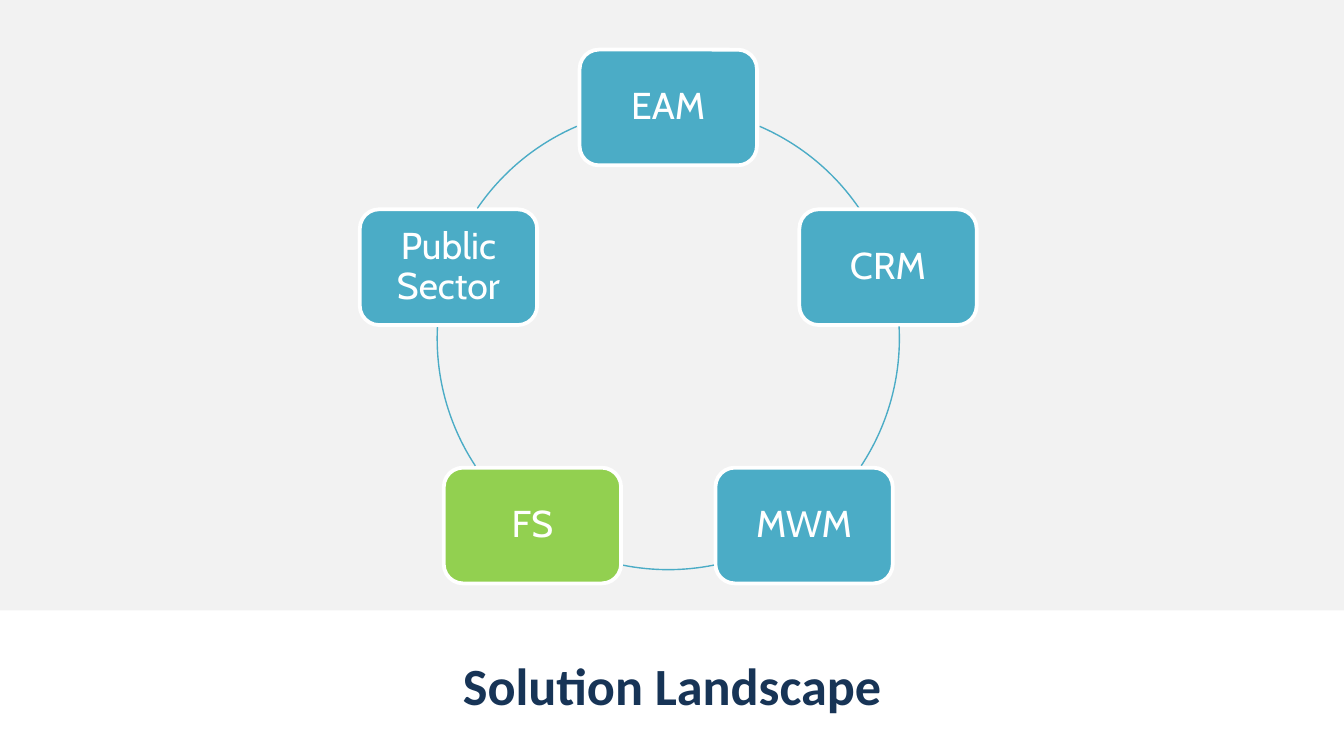
from math import cos, radians, sin

from pptx import Presentation
from pptx.dml.color import RGBColor
from pptx.enum.shapes import MSO_SHAPE
from pptx.enum.text import MSO_ANCHOR, PP_ALIGN
from pptx.util import Pt

TITLE = "Solution Landscape"
# Clockwise from the top: label, fill, and start and end angle of the arc to the next node
NODES = [
    ("EAM", "teal", 293.3, 325.7),
    ("CRM", "teal", 357, 33.4),
    ("MWM", "teal", 78.6, 101.4),
    ("FS", "green", 146.6, 183),
    ("Public Sector", "teal", 214.3, 246.7),
]
COLORS = {
    "panel": "F2F2F2",
    "teal": "4BACC6",
    "green": "92D050",
    "white": "FFFFFF",
    "navy": "173456",
}
SLIDE_WIDTH, SLIDE_HEIGHT = 720, 405
PANEL_HEIGHT = 327
CENTER_X, CENTER_Y, RADIUS = 358, 181.4, 123.8
NODE_WIDTH, NODE_HEIGHT = 95, 62
ARC_DEGREE = 0.6  # adjustment units per degree


def color(name):
    return RGBColor.from_string(COLORS[name])


def style_text(shape, text, font_name, size, color_name, bold=False):
    frame = shape.text_frame
    frame.text = text
    frame.word_wrap = True
    frame.vertical_anchor = MSO_ANCHOR.MIDDLE
    paragraph = frame.paragraphs[0]
    paragraph.alignment = PP_ALIGN.CENTER
    font = paragraph.runs[0].font
    font.name, font.size, font.bold = font_name, Pt(size), bold
    font.color.rgb = color(color_name)


def add_shape(slide, kind, left, top, width, height, fill=None, line=None, line_width=1):
    shape = slide.shapes.add_shape(kind, Pt(left), Pt(top), Pt(width), Pt(height))
    shape.shadow.inherit = False
    if fill:
        shape.fill.solid()
        shape.fill.fore_color.rgb = color(fill)
    else:
        shape.fill.background()
    if line:
        shape.line.color.rgb = color(line)
        shape.line.width = Pt(line_width)
    else:
        shape.line.fill.background()
    return shape


def add_node(slide, index, label, fill):
    angle = radians(360 / len(NODES) * index - 90)
    left = CENTER_X + RADIUS * cos(angle) - NODE_WIDTH / 2
    top = CENTER_Y + RADIUS * sin(angle) - NODE_HEIGHT / 2
    node = add_shape(slide, MSO_SHAPE.ROUNDED_RECTANGLE, left, top,
                     NODE_WIDTH, NODE_HEIGHT, fill, "white", 2)
    style_text(node, label, "Cabin", 20, "white")
    frame = node.text_frame
    frame.margin_left = frame.margin_right = Pt(6)
    frame.margin_top = frame.margin_bottom = Pt(6)
    frame.paragraphs[0].line_spacing = 0.9


def add_arc(slide, start, end):
    arc = add_shape(slide, MSO_SHAPE.ARC, CENTER_X - RADIUS, CENTER_Y - RADIUS,
                    2 * RADIUS, 2 * RADIUS, line="teal", line_width=0.75)
    arc.adjustments[0] = start * ARC_DEGREE
    arc.adjustments[1] = end * ARC_DEGREE


def main():
    presentation = Presentation()
    presentation.slide_width, presentation.slide_height = Pt(SLIDE_WIDTH), Pt(SLIDE_HEIGHT)
    slide = presentation.slides.add_slide(presentation.slide_layouts[5])

    title = slide.shapes.title
    title.left, title.top, title.width, title.height = Pt(161.5), Pt(344), Pt(397), Pt(45.5)
    style_text(title, TITLE, "Calibri", 28, "navy", bold=True)

    add_shape(slide, MSO_SHAPE.RECTANGLE, 0, 0, SLIDE_WIDTH, PANEL_HEIGHT, "panel")
    for index, (label, fill, start, end) in enumerate(NODES):
        add_node(slide, index, label, fill)
        add_arc(slide, start, end)

    presentation.save("out.pptx")


if __name__ == "__main__":
    main()
